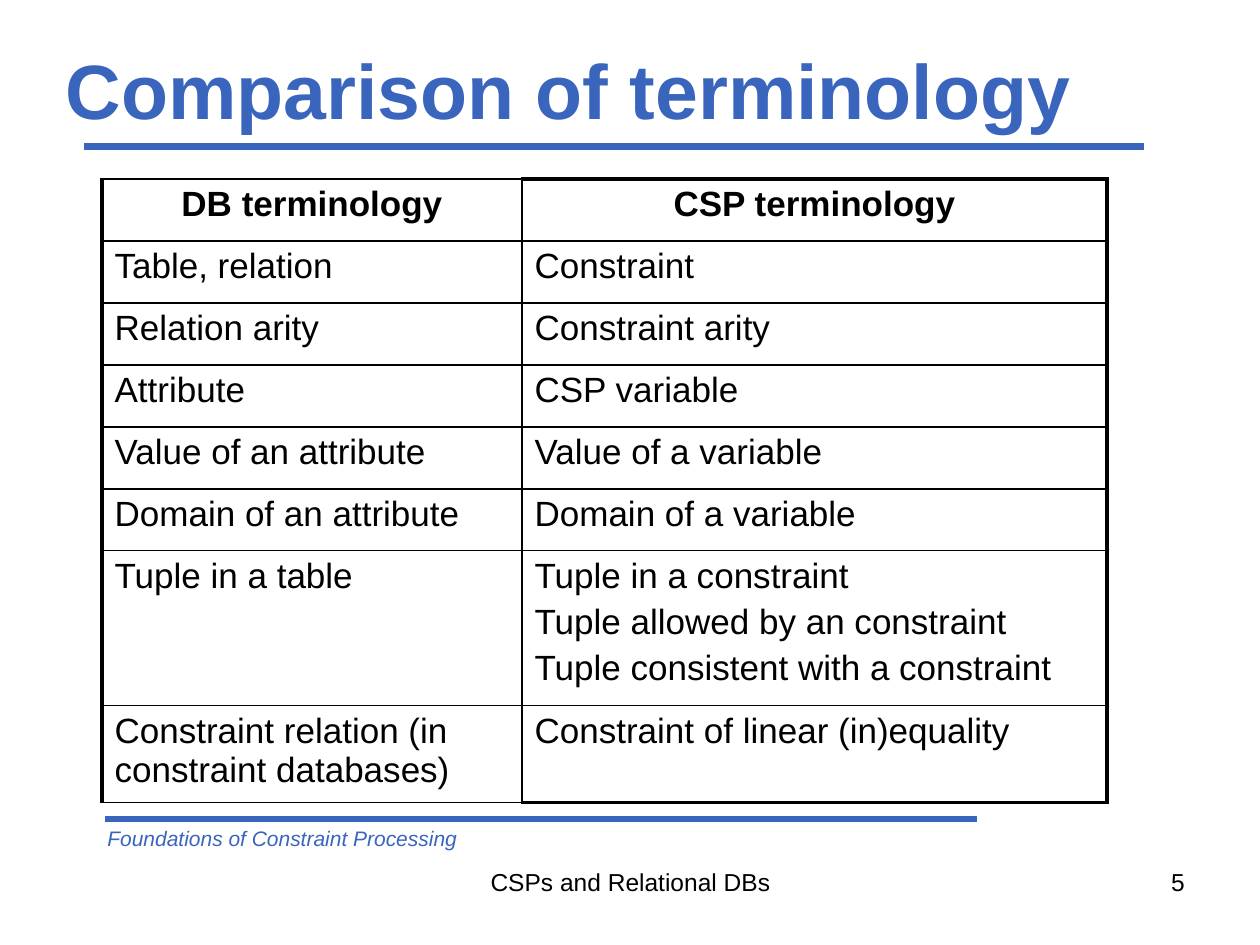
import pptx
import pptx.util
import pptx.oxml.ns
import pptx.dml.color
import pptx.enum.text
import pptx.enum.shapes
import lxml.etree

BLUE = pptx.dml.color.RGBColor(0x3A, 0x65, 0xBC)
BLACK = pptx.dml.color.RGBColor(0, 0, 0)
ALIGN = pptx.enum.text.PP_ALIGN
qn = pptx.oxml.ns.qn

TITLE = "Comparison of terminology"
ROWS = [
    ("DB terminology", "CSP terminology"),
    ("Table, relation", "Constraint"),
    ("Relation arity", "Constraint arity"),
    ("Attribute", "CSP variable"),
    ("Value of an attribute", "Value of a variable"),
    ("Domain of an attribute", "Domain of a variable"),
    ("Tuple in a table",
     "Tuple in a constraint\nTuple allowed by an constraint\nTuple consistent with a constraint"),
    ("Constraint relation (in constraint databases)", "Constraint of linear (in)equality"),
]
TABLE_LEFT, TABLE_TOP = 102, 179
COL_WIDTHS = [420, 585]
ROW_HEIGHTS = [62] * 6 + [155, 97]
THIN, THICK = 1, 2.25

RULES = [(84, 1144, 147), (105, 977, 819)]  # left, right, y
LABELS = [  # text, box, alignment, font
    ("Foundations of Constraint Processing", (95, 819, 662, 38), ALIGN.LEFT,
     {"size": 12, "color": BLUE, "italic": True}),
    ("CSPs and Relational DBs", (431, 861, 399, 66), ALIGN.CENTER, {"size": 14}),
    ("5", (903, 861, 294, 66), ALIGN.RIGHT, {"size": 14}),
]


def px(n):
    return pptx.util.Emu(round(n * 914400 / 126))


def format_font(font, size, color=BLACK, bold=False, italic=False):
    font.color.rgb = color
    values = {"name": "Arial", "size": pptx.util.Pt(size), "bold": bold, "italic": italic}
    for name, value in values.items():
        setattr(font, name, value)


def set_borders(cell, widths):
    """Draw black borders; widths maps L, R, T, B (in that order) to points."""
    tcPr = cell._tc.get_or_add_tcPr()
    for side, width in widths.items():
        ln = lxml.etree.SubElement(tcPr, qn(f"a:ln{side}"), w=str(pptx.util.Pt(width)))
        fill = lxml.etree.SubElement(ln, qn("a:solidFill"))
        lxml.etree.SubElement(fill, qn("a:srgbClr"), val=str(BLACK))


def add_rule(s, left, right, y):
    line = s.shapes.add_connector(pptx.enum.shapes.MSO_CONNECTOR.STRAIGHT,
                                  px(left), px(y), px(right), px(y))
    line.line.color.rgb = BLUE
    line.line.width = pptx.util.Pt(4)
    lxml.etree.SubElement(line._element.spPr, qn("a:effectLst"))


def add_label(s, text, box, align, font):
    tf = s.shapes.add_textbox(*map(px, box)).text_frame
    tf.word_wrap = True
    p = tf.paragraphs[0]
    p.text, p.alignment = text, align
    format_font(p.runs[0].font, **font)


def add_title(s):
    sp = s.shapes.title
    sp.left, sp.top, sp.width, sp.height = map(px, (53, 42, 1134, 94))
    tf = sp.text_frame
    tf.text = TITLE
    tf.vertical_anchor = pptx.enum.text.MSO_ANCHOR.MIDDLE
    tf.auto_size = pptx.enum.text.MSO_AUTO_SIZE.NONE
    p = tf.paragraphs[0]
    p.alignment = ALIGN.LEFT
    format_font(p.runs[0].font, 44, BLUE, bold=True)


def add_terms(s):
    table = s.shapes.add_table(len(ROWS), len(COL_WIDTHS), px(TABLE_LEFT), px(TABLE_TOP),
                               px(sum(COL_WIDTHS)), px(sum(ROW_HEIGHTS))).table
    table.horz_banding = False
    for column, width in zip(table.columns, COL_WIDTHS):
        column.width = px(width)
    for i, (texts, height) in enumerate(zip(ROWS, ROW_HEIGHTS)):
        table.rows[i].height = px(height)
        header, last = i == 0, i == len(ROWS) - 1
        for j, text in enumerate(texts):
            cell = table.cell(i, j)
            set_borders(cell, {
                "L": THIN if j else THICK,
                "R": THICK if j else THIN,
                "T": THICK if j and header else THIN,
                "B": THICK if j and last else THIN,
            })
            cell.fill.background()
            cell.text = text
            for k, p in enumerate(cell.text_frame.paragraphs):
                p.alignment = ALIGN.CENTER if header else ALIGN.LEFT
                if k:
                    p.space_before = pptx.util.Pt(4)
                format_font(p.runs[0].font, 20, bold=header)


def main():
    prs = pptx.Presentation()
    prs.slide_width, prs.slide_height = px(1260), px(945)
    s = prs.slides.add_slide(prs.slide_layouts[5])
    for rule in RULES:
        add_rule(s, *rule)
    for label in LABELS:
        add_label(s, *label)
    add_title(s)
    add_terms(s)
    prs.save("out.pptx")


if __name__ == "__main__":
    main()
